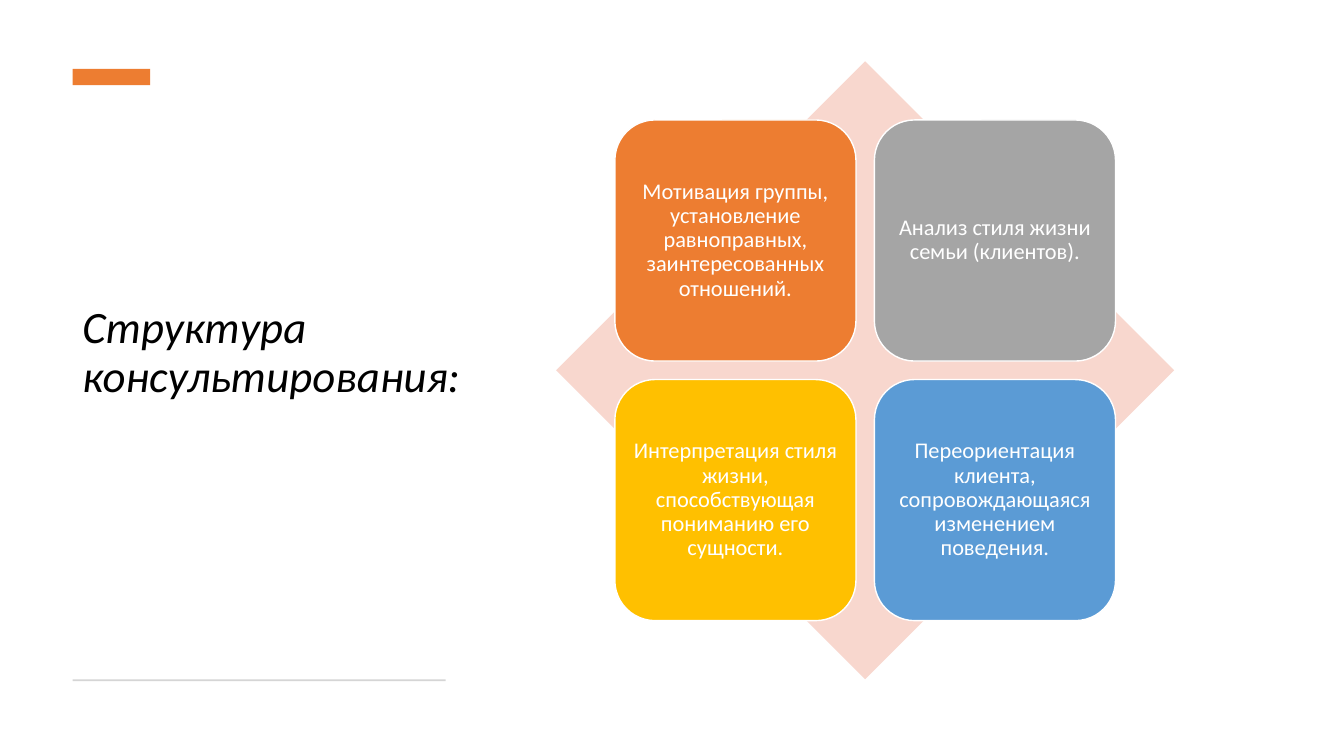
"""Builds a slide with the four stages of counselling on a diamond."""
from pptx import Presentation
from pptx.dml.color import RGBColor
from pptx.enum import shapes, text
from pptx.util import Pt

ORANGE = RGBColor(0xED, 0x7D, 0x31)
GRAY = RGBColor(0xA5, 0xA5, 0xA5)
GOLD = RGBColor(0xFF, 0xC0, 0x00)
BLUE = RGBColor(0x5B, 0x9B, 0xD5)
PINK = RGBColor(0xF8, 0xD7, 0xCE)
RULE_GRAY = RGBColor(0xD5, 0xD5, 0xD5)
WHITE = RGBColor(0xFF, 0xFF, 0xFF)
BLACK = RGBColor(0x00, 0x00, 0x00)
FONT = "Calibri"

HEADING = "Структура консультирования:"
STAGES = [
    ("Мотивация группы, установление равноправных, заинтересованных отношений.", ORANGE),
    ("Анализ стиля жизни семьи (клиентов).", GRAY),
    ("Интерпретация стиля жизни, способствующая пониманию его сущности.", GOLD),
    ("Переориентация клиента, сопровождающаяся изменением поведения.", BLUE),
]

CENTER_X, CENTER_Y = 618, 264.5
DIAMOND = 441.4
CARD, GAP = 172.2, 13.2
COLUMNS = 2


def add_block(slide, kind, left, top, width, height, color):
    block = slide.shapes.add_shape(kind, Pt(left), Pt(top), Pt(width), Pt(height))
    block.shadow.inherit = False
    block.fill.solid()
    block.fill.fore_color.rgb = color
    block.line.fill.background()
    return block


def write(frame, words, size, color, align, italic=False):
    frame.word_wrap = True
    frame.vertical_anchor = text.MSO_ANCHOR.MIDDLE
    frame.text = words
    paragraph = frame.paragraphs[0]
    paragraph.alignment = align
    paragraph.line_spacing = 0.9
    font = paragraph.runs[0].font
    font.name, font.size, font.italic = FONT, Pt(size), italic
    font.color.rgb = color


def add_heading(slide):
    heading = slide.shapes.add_textbox(Pt(51.8), Pt(75.6), Pt(290.9), Pt(389.5))
    heading.text_frame.margin_bottom = Pt(39)
    write(heading.text_frame, HEADING, 32, BLACK, text.PP_ALIGN.LEFT, italic=True)


def add_stages(slide):
    first_left = CENTER_X - CARD - GAP / 2
    first_top = CENTER_Y - CARD - GAP / 2
    for index, (words, color) in enumerate(STAGES):
        row, column = divmod(index, COLUMNS)
        left = first_left + column * (CARD + GAP)
        top = first_top + row * (CARD + GAP)
        card = add_block(slide, shapes.MSO_SHAPE.ROUNDED_RECTANGLE,
                         left, top, CARD, CARD, color)
        card.line.color.rgb = WHITE
        card.line.width = Pt(1)
        frame = card.text_frame
        frame.margin_left = frame.margin_right = Pt(5)
        frame.margin_top = frame.margin_bottom = Pt(5)
        write(frame, words, 16, WHITE, text.PP_ALIGN.CENTER)


def main():
    deck = Presentation()
    deck.slide_width, deck.slide_height = Pt(960), Pt(540)
    slide = deck.slides.add_slide(deck.slide_layouts[6])
    add_heading(slide)
    add_block(slide, shapes.MSO_SHAPE.RECTANGLE, 52, 49.3, 55.4, 11.5, ORANGE)
    add_block(slide, shapes.MSO_SHAPE.RECTANGLE, 52, 485.2, 266.4, 1.4, RULE_GRAY)
    add_block(slide, shapes.MSO_SHAPE.DIAMOND, CENTER_X - DIAMOND / 2,
              CENTER_Y - DIAMOND / 2, DIAMOND, DIAMOND, PINK)
    add_stages(slide)
    deck.save("out.pptx")


if __name__ == "__main__":
    main()
